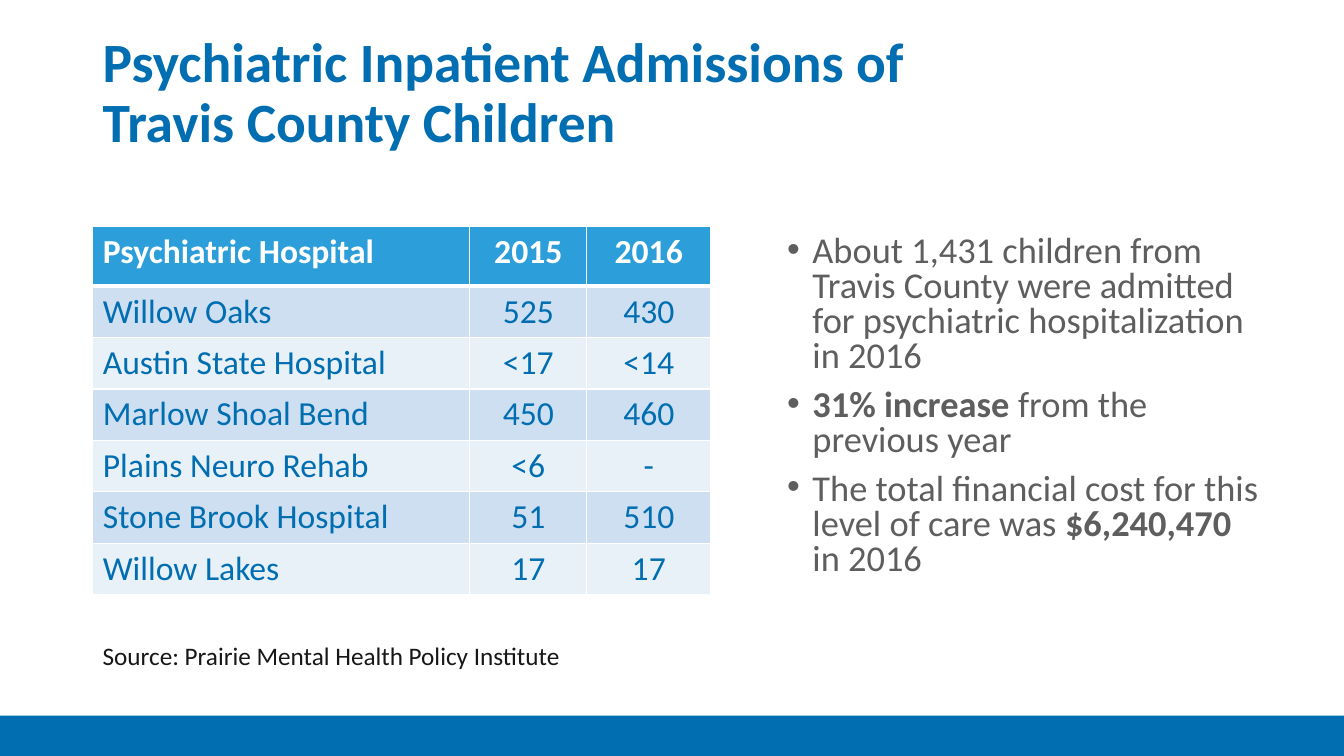
from lxml import etree
from pptx import Presentation
from pptx.dml.color import RGBColor
from pptx.enum.shapes import MSO_SHAPE
from pptx.enum.text import MSO_ANCHOR, PP_ALIGN
from pptx.oxml.ns import qn
from pptx.util import Inches, Pt

RECT = MSO_SHAPE.RECTANGLE
MIDDLE, TOP = MSO_ANCHOR.MIDDLE, MSO_ANCHOR.TOP
LEFT, CENTER = PP_ALIGN.LEFT, PP_ALIGN.CENTER
FONT = "Calibri"
COLORS = {"blue": "016EB1", "header": "2C9ED9", "band_dark": "CDDFF1",
          "band_light": "E8F0F8", "white": "FFFFFF", "gray": "5E5E5E",
          "ink": "181717"}


def add_text_box(left, top, width, height, anchor=TOP):
    tf = s.shapes.add_textbox(Inches(left), Inches(top), Inches(width), Inches(height)).text_frame
    tf.word_wrap = True
    tf.vertical_anchor = anchor
    return tf


def format_runs(p, size, color, bold=False):
    for r in p.runs:
        r.font.name = FONT
        r.font.size = Pt(size)
        r.font.bold = bold
        r.font.color.rgb = RGBColor.from_string(COLORS[color])


prs = Presentation()
prs.slide_width, prs.slide_height = Inches(13.33), Inches(7.5)
s = prs.slides.add_slide(prs.slide_layouts[6])

# Footer band
sp = s.shapes.add_shape(RECT, 0, Inches(7.1), prs.slide_width, Inches(0.4))
sp.shadow.inherit = False
sp.fill.solid()
sp.fill.fore_color.rgb = RGBColor.from_string(COLORS["blue"])
sp.line.fill.background()

# Title
p = add_text_box(0.92, 0.4, 11.5, 1.08, MIDDLE).paragraphs[0]
p.text = "Psychiatric Inpatient Admissions of\vTravis County Children"
p.line_spacing = 0.9
format_runs(p, 39.6, "blue", True)

# Admissions table
rows = [
    ("Psychiatric Hospital", "2015", "2016"),
    ("Willow Oaks", "525", "430"),
    ("Austin State Hospital", "<17", "<14"),
    ("Marlow Shoal Bend", "450", "460"),
    ("Plains Neuro Rehab", "<6", "-"),
    ("Stone Brook Hospital", "51", "510"),
    ("Willow Lakes", "17", "17"),
]
col_widths = (3.74, 1.16, 1.23)
table = s.shapes.add_table(len(rows), len(col_widths), Inches(0.92), Inches(2.25),
                           Inches(6.12), Inches(3.64)).table
for column, width in zip(table.columns, col_widths):
    column.width = Inches(width)
for i, values in enumerate(rows):
    header = i == 0
    table.rows[i].height = Inches(0.59 if header else 0.51)
    fill = "header" if header else ("band_light", "band_dark")[i % 2]
    for j, value in enumerate(values):
        cell = table.cell(i, j)
        p = cell.text_frame.paragraphs[0]
        p.text = value
        p.alignment = CENTER if j else LEFT
        format_runs(p, 24, "white" if header else "blue", header)
        # Borders, thicker between the header and the first row
        thick = {0: "lnB", 1: "lnT"}.get(i)
        tcPr = cell._tc.get_or_add_tcPr()
        for side in ("lnL", "lnR", "lnT", "lnB"):
            ln = etree.SubElement(tcPr, qn("a:" + side), w=str(Pt(3 if side == thick else 1)))
            solid = etree.SubElement(ln, qn("a:solidFill"))
            etree.SubElement(solid, qn("a:srgbClr"), val=COLORS["white"])
        cell.fill.solid()
        cell.fill.fore_color.rgb = RGBColor.from_string(COLORS[fill])

# Key findings: each bullet is a list of (text, bold) runs
findings = [
    [("About 1,431 children from Travis County were admitted for "
      "psychiatric hospitalization in 2016", False)],
    [("31% increase ", True), ("from the previous year", False)],
    [("The total financial cost for this level of care was ", False),
     ("$6,240,470 ", True), ("in 2016", False)],
]
tf = add_text_box(7.71, 2.29, 4.9, 3.87)
for i, runs in enumerate(findings):
    p = tf.add_paragraph() if i else tf.paragraphs[0]
    p.line_spacing = 0.8
    p.space_before = Pt(10 if i else 0)
    pPr = p._p.get_or_add_pPr()
    pPr.set("marL", str(Inches(0.25)))
    pPr.set("indent", str(Inches(-0.25)))
    bu_color = etree.SubElement(pPr, qn("a:buClr"))
    etree.SubElement(bu_color, qn("a:srgbClr"), val=COLORS["gray"])
    etree.SubElement(pPr, qn("a:buFont"), typeface="Arial")
    etree.SubElement(pPr, qn("a:buChar"), char="•")
    for text, _ in runs:
        p.add_run().text = text
    format_runs(p, 26, "gray")
    for r, (_, bold) in zip(p.runs, runs):
        r.font.bold = bold

# Source line
p = add_text_box(0.92, 6.3, 5.67, 0.4).paragraphs[0]
p.text = "Source: Prairie Mental Health Policy Institute"
format_runs(p, 18, "ink")

prs.save("out.pptx")
